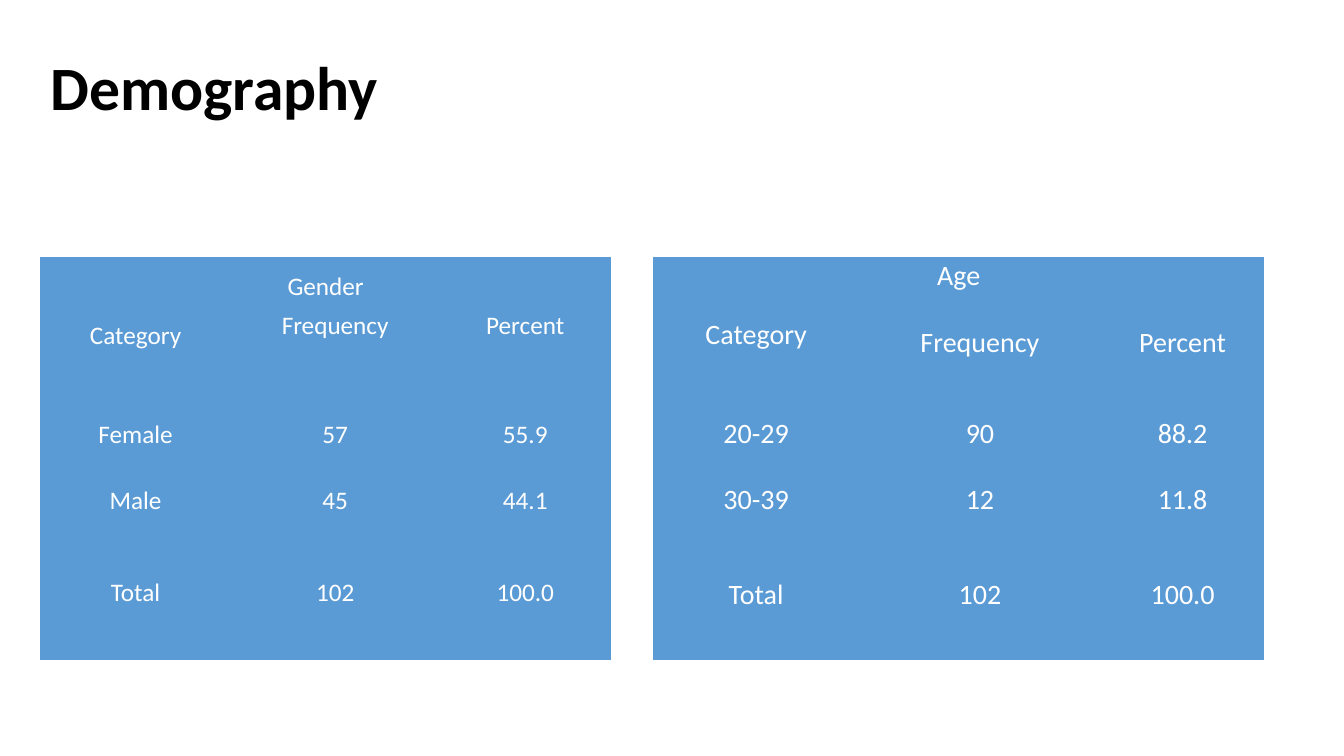
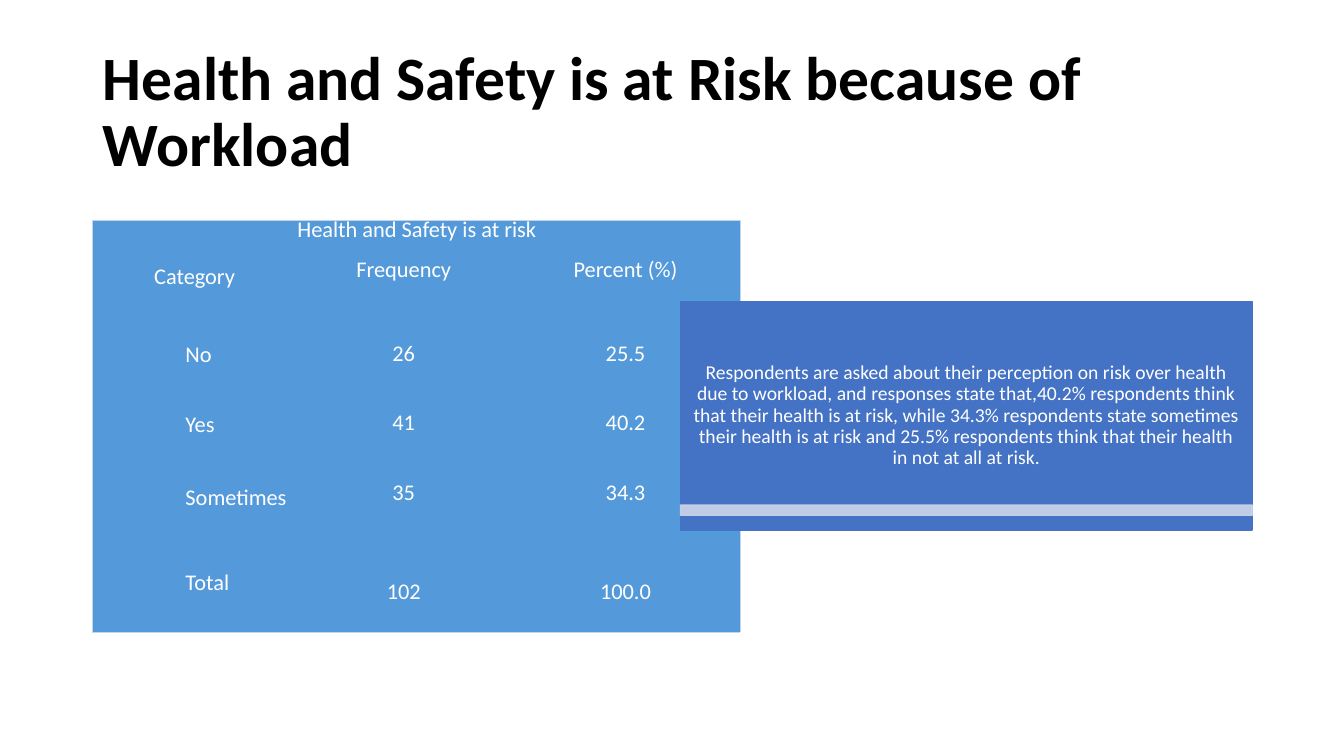
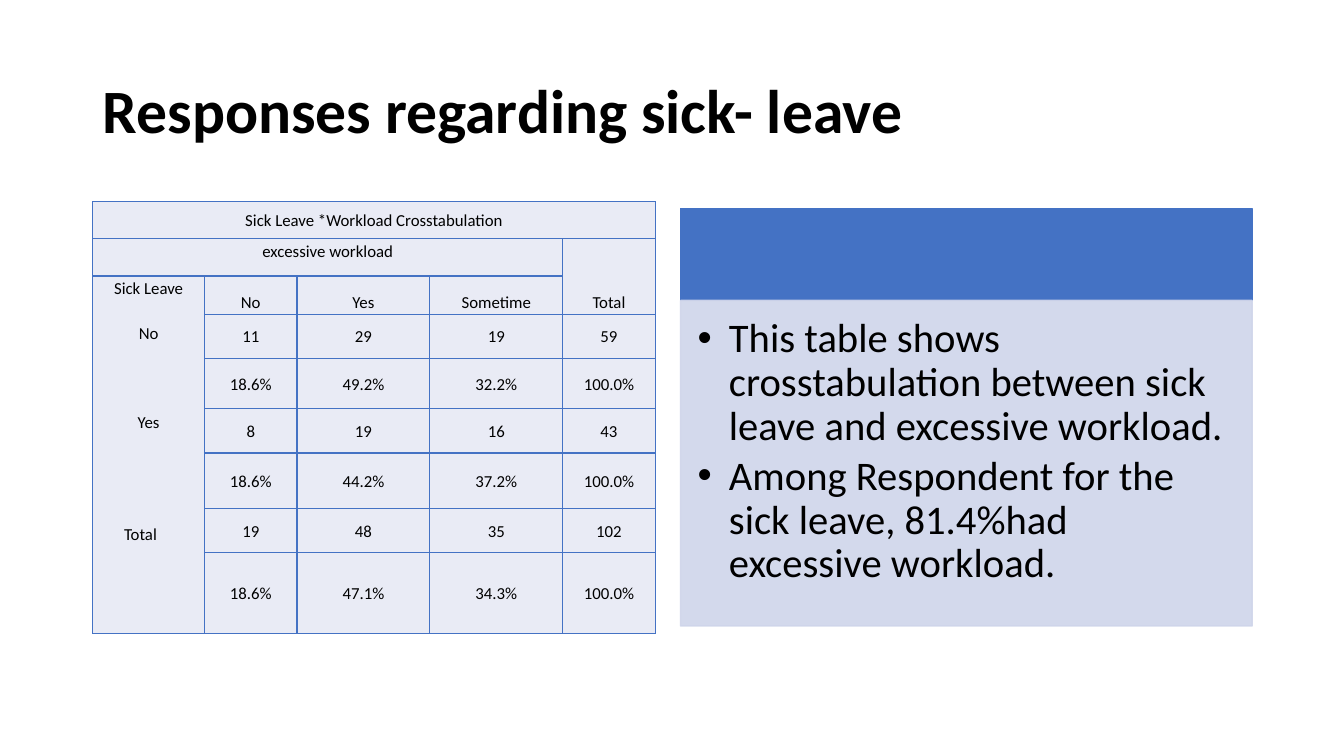
from dataclasses import dataclass

from lxml.etree import SubElement
from pptx import Presentation
from pptx.dml.color import RGBColor
from pptx.enum.shapes import MSO_SHAPE
from pptx.enum.text import MSO_ANCHOR, MSO_AUTO_SIZE, PP_ALIGN
from pptx.oxml.ns import qn
from pptx.util import Inches, Pt


@dataclass(frozen=True)
class Theme:
    font: str = "Calibri"
    black: str = "000000"
    white: str = "FFFFFF"
    sky: str = "5B9BD5"
    azure: str = "5499DA"
    azure_edge: str = "C4D5EB"
    royal: str = "4472C4"
    mist: str = "CFD5EA"
    pale: str = "E9EBF5"
    title: int = 44
    bullet: int = 29
    note: int = 14
    crosstab: int = 12
    plain_table: str = "{2D5ABB26-0587-4C30-8999-92F81FD0307C}"


@dataclass(frozen=True)
class Box:
    x: float
    y: float
    w: float
    h: float

    def emu(self):
        return [Inches(v) for v in (self.x, self.y, self.w, self.h)]

    def band(self, top, height):
        """Horizontal band given as shares of this box's height."""
        return Box(self.x, self.y + top * self.h, self.w, height * self.h)


T = Theme()
LINE = Pt(16)  # fixed line pitch in the tables
BLANK = LINE.inches  # one line left free above the text
TITLE_BOX = Box(0.92, 0.4, 11.5, 1.45)


# Shared parts
def add_run(p, text, size, color, bold=False):
    r = p.add_run()
    r.text = text
    r.font.name = T.font
    r.font.size = Pt(size)
    r.font.bold = bold
    r.font.color.rgb = RGBColor.from_string(color)


def set_insets(target, left, top, right, bottom):
    target.margin_left, target.margin_top = Inches(left), Inches(top)
    target.margin_right, target.margin_bottom = Inches(right), Inches(bottom)


def new_slide(prs, title, box=TITLE_BOX):
    s = prs.slides.add_slide(prs.slide_layouts[5])
    sp = s.shapes.title
    sp.left, sp.top, sp.width, sp.height = box.emu()
    tf = sp.text_frame
    tf.auto_size = MSO_AUTO_SIZE.NONE
    tf.word_wrap = True
    tf.vertical_anchor = MSO_ANCHOR.MIDDLE
    p = tf.paragraphs[0]
    p.alignment = PP_ALIGN.LEFT
    p.line_spacing = 0.9
    add_run(p, title, T.title, T.black, bold=True)
    return s


def add_panel(s, box, color, opacity=None):
    sp = s.shapes.add_shape(MSO_SHAPE.RECTANGLE, *box.emu())
    sp.shadow.inherit = False
    sp.line.width = Pt(1)
    for fill in (sp.fill, sp.line.fill):
        fill.solid()
        fill.fore_color.rgb = RGBColor.from_string(color)
    if opacity:
        for clr in sp._element.spPr.iter(qn("a:srgbClr")):
            SubElement(clr, qn("a:alpha"), val=str(opacity * 1000))
    return sp


# Tables
def set_borders(cell, sides, color, width):
    tcPr = cell._tc.get_or_add_tcPr()
    for side in sides:
        ln = SubElement(tcPr, qn("a:ln" + side), w=str(Pt(width)))
        SubElement(SubElement(ln, qn("a:solidFill")), qn("a:srgbClr"), val=color)


def outer_sides(table, r, c):
    cell = table.cell(r, c)
    last_c = c + (cell.span_width if cell.is_merge_origin else 1)
    last_r = r + (cell.span_height if cell.is_merge_origin else 1)
    on_edge = {"L": c == 0, "R": last_c == len(table.columns),
               "T": r == 0, "B": last_r == len(table.rows)}
    return [side for side, hit in on_edge.items() if hit]


def new_table(s, box, cols, rows, fill, merges, edge=None, grid=None):
    """Table filling box; cols and rows are weights, merges are corner pairs."""
    table = s.shapes.add_table(len(rows), len(cols), *box.emu()).table
    table.first_row = table.horz_banding = False
    table._tbl.tblPr.find(qn("a:tableStyleId")).text = T.plain_table
    for col, weight in zip(table.columns, cols):
        col.width = Inches(box.w * weight / sum(cols))
    for row, weight in zip(table.rows, rows):
        row.height = Inches(box.h * weight / sum(rows))
    for start, end in merges:
        table.cell(*start).merge(table.cell(*end))
    for r in range(len(rows)):
        for c in range(len(cols)):
            cell = table.cell(r, c)
            set_insets(cell, 0, 0, 0, 0)
            if edge:
                set_borders(cell, outer_sides(table, r, c), edge, 0.5)
            if grid:
                set_borders(cell, "LRTB", grid, 1)
            cell.fill.solid()
            cell.fill.fore_color.rgb = RGBColor.from_string(fill)
    return table


def put(cell, text, size, color=T.white, insets=(0.04, 0, 0.04, 0), top=0,
        align=PP_ALIGN.CENTER, anchor=MSO_ANCHOR.TOP, spacing=LINE):
    left, inset_top, right, bottom = insets
    set_insets(cell, left, inset_top + top, right, bottom)
    cell.vertical_anchor = anchor
    p = cell.text_frame.paragraphs[0]
    p.alignment = align
    p.line_spacing = spacing
    add_run(p, text, size, color)


def frequency_table(s, box, cols, rows, size, heading, body, heading_style, head_top):
    table = new_table(s, box, cols, rows, T.sky, [((0, 0), (0, 2))])
    put(table.cell(0, 0), heading, size, **heading_style)
    put(table.cell(1, 0), "Category", size, spacing=1.07)
    for c, label in enumerate(("Frequency", "Percent"), 1):
        put(table.cell(1, c), label, size, top=head_top)
    for r, values in enumerate(body, 2):
        for c, value in enumerate(values):
            put(table.cell(r, c), value, size)


def risk_table(s, box):
    merges = [((0, 0), (0, 3)), ((1, 0), (1, 1)), ((2, 0), (5, 0))]
    merges += [((r, 3), (r, 4)) for r in range(1, 6)]
    table = new_table(s, box, (0.92, 1.1, 2.09, 0.87, 0.24),
                      (0.4, 0.61, 0.69, 0.69, 0.76, 0.93),
                      T.azure, merges, edge=T.azure_edge)
    size, flush, indented = 16, (0, 0, 0, 0), (0.04, 0, 0, 0)
    put(table.cell(0, 0), "Health and Safety is at risk", size,
        insets=(2.03, 0, 0, 0), align=PP_ALIGN.LEFT)
    put(table.cell(1, 0), "Category", size, insets=flush, spacing=1.07)
    put(table.cell(1, 2), "Frequency", size, insets=indented)
    put(table.cell(1, 3), "Percent (%)", size, insets=indented)
    body = [("No", "26", "25.5", 1), ("Yes", "41", "40.2", 1),
            ("Sometimes", "35", "34.3", 1), ("Total", "102", "100.0", 2)]
    for r, (label, count, percent, blanks) in enumerate(body, 2):
        put(table.cell(r, 1), label, size, insets=flush,
            align=PP_ALIGN.LEFT, anchor=MSO_ANCHOR.MIDDLE)
        for c, value in ((2, count), (3, percent)):
            put(table.cell(r, c), value, size, insets=indented, top=blanks * BLANK)


def crosstab_table(s, box):
    merges = [((0, 0), (0, 4)), ((1, 0), (1, 3)), ((1, 4), (2, 4)), ((2, 0), (8, 0))]
    table = new_table(s, box, (1.11, 0.92, 1.32, 1.32, 0.92),
                      (0.37, 0.37, 0.38, 0.44, 0.5, 0.44, 0.55, 0.44, 0.81),
                      T.pale, merges, grid=T.royal)
    style = dict(size=T.crosstab, color=T.black, insets=(0.01,) * 4)
    middle = dict(style, anchor=MSO_ANCHOR.MIDDLE)
    bottom = dict(style, anchor=MSO_ANCHOR.BOTTOM)

    # Headings
    put(table.cell(0, 0), "Sick Leave *Workload Crosstabulation", **middle)
    put(table.cell(1, 0), "excessive workload", **style)
    put(table.cell(1, 4), "Total", **bottom)
    for c, label in enumerate(("No", "Yes", "Sometime"), 1):
        put(table.cell(2, c), label, **bottom)

    # Row labels share one tall cell, spaced in whole lines
    labels = table.cell(2, 0)
    put(labels, "Sick Leave", spacing=1.07, **style)
    for text, blanks in (("No", 1), ("Yes", 3), ("Total", 4)):
        p = labels.text_frame.add_paragraph()
        p.alignment = PP_ALIGN.CENTER
        p.line_spacing = LINE
        p.space_before = Pt(blanks * LINE.pt)
        add_run(p, text, T.crosstab, T.black)
    p.alignment = PP_ALIGN.LEFT
    p._p.get_or_add_pPr().set("marL", str(Inches(0.3)))

    # Counts and shares
    body = [("11", "29", "19", "59"), ("18.6%", "49.2%", "32.2%", "100.0%"),
            ("8", "19", "16", "43"), ("18.6%", "44.2%", "37.2%", "100.0%"),
            ("19", "48", "35", "102"), ("18.6%", "47.1%", "34.3%", "100.0%")]
    for r, values in enumerate(body, 3):
        for c, value in enumerate(values, 1):
            put(table.cell(r, c), value, **middle)


# Side panels
def note_panel(s, box, text):
    tf = add_panel(s, box, T.royal).text_frame
    tf.word_wrap = True
    tf.vertical_anchor = MSO_ANCHOR.MIDDLE
    set_insets(tf, 0.11, 0.06, 0.11, 0.06)
    p = tf.paragraphs[0]
    p.alignment = PP_ALIGN.CENTER
    p.line_spacing = 0.9
    add_run(p, text, T.note, T.white)
    add_panel(s, box.band(0.89, 0.045), T.mist, opacity=90)


def bullet_panel(s, box, bullets):
    head = 0.22
    add_panel(s, box.band(0, head), T.royal)
    tf = add_panel(s, box.band(head, 1 - head), T.mist, opacity=90).text_frame
    tf.word_wrap = True
    tf.vertical_anchor = MSO_ANCHOR.TOP
    set_insets(tf, 0.17, 0.17, 0.23, 0.25)
    for i, text in enumerate(bullets):
        p = tf.add_paragraph() if i else tf.paragraphs[0]
        p.alignment = PP_ALIGN.LEFT
        p.line_spacing = 0.9
        p.space_after = Pt(0.15 * T.bullet)
        pPr = p._p.get_or_add_pPr()
        pPr.set("marL", str(Inches(0.31)))
        pPr.set("indent", str(-Inches(0.31)))
        SubElement(pPr, qn("a:buFont"), typeface="Arial")
        SubElement(pPr, qn("a:buChar"), char="•")
        add_run(p, text, T.bullet, T.black)


# Slides
def demography_slide(prs):
    s = new_slide(prs, "Demography", Box(0.4, 0.35, 5.71, 1.09))
    frequency_table(
        s, Box(0.4, 2.55, 5.66, 4), (1.89, 2.07, 1.7), (0.61, 1.08, 0.66, 0.91, 0.74),
        18, "Gender",
        [("Female", "57", "55.9"), ("Male", "45", "44.1"), ("Total", "102", "100.0")],
        heading_style=dict(top=BLANK), head_top=0)
    frequency_table(
        s, Box(6.48, 2.55, 6.06, 4), (2.04, 2.4, 1.62), (0.58, 1.12, 0.66, 0.94, 0.7),
        20, "Age",
        [("20-29", "90", "88.2"), ("30-39", "12", "11.8"), ("Total", "102", "100.0")],
        heading_style=dict(insets=(0.05, 0.02, 0.05, 0.02), spacing=1.0),
        head_top=BLANK)


def risk_slide(prs):
    s = new_slide(prs, "Health and Safety is at Risk because of Workload")
    risk_table(s, Box(0.92, 2.19, 5.22, 4.08))
    note_panel(
        s, Box(6.75, 2.99, 5.67, 2.27),
        "Respondents are asked about their perception on risk over health due to "
        "workload, and responses state that,40.2% respondents think that their health "
        "is at risk, while 34.3% respondents state sometimes their health is at risk "
        "and 25.5% respondents think that their health in not at all at risk.")


def sick_leave_slide(prs):
    s = new_slide(prs, "Responses regarding sick- leave")
    crosstab_table(s, Box(0.92, 2, 5.58, 4.29))
    bullet_panel(s, Box(6.75, 2.07, 5.67, 4.14), [
        "This table shows crosstabulation between sick leave and excessive workload.",
        "Among Respondent for the sick leave, 81.4%had excessive workload."])


def main():
    prs = Presentation()
    prs.slide_width, prs.slide_height = Inches(13.33), Inches(7.5)
    demography_slide(prs)
    risk_slide(prs)
    sick_leave_slide(prs)
    prs.save("out.pptx")


if __name__ == "__main__":
    main()
